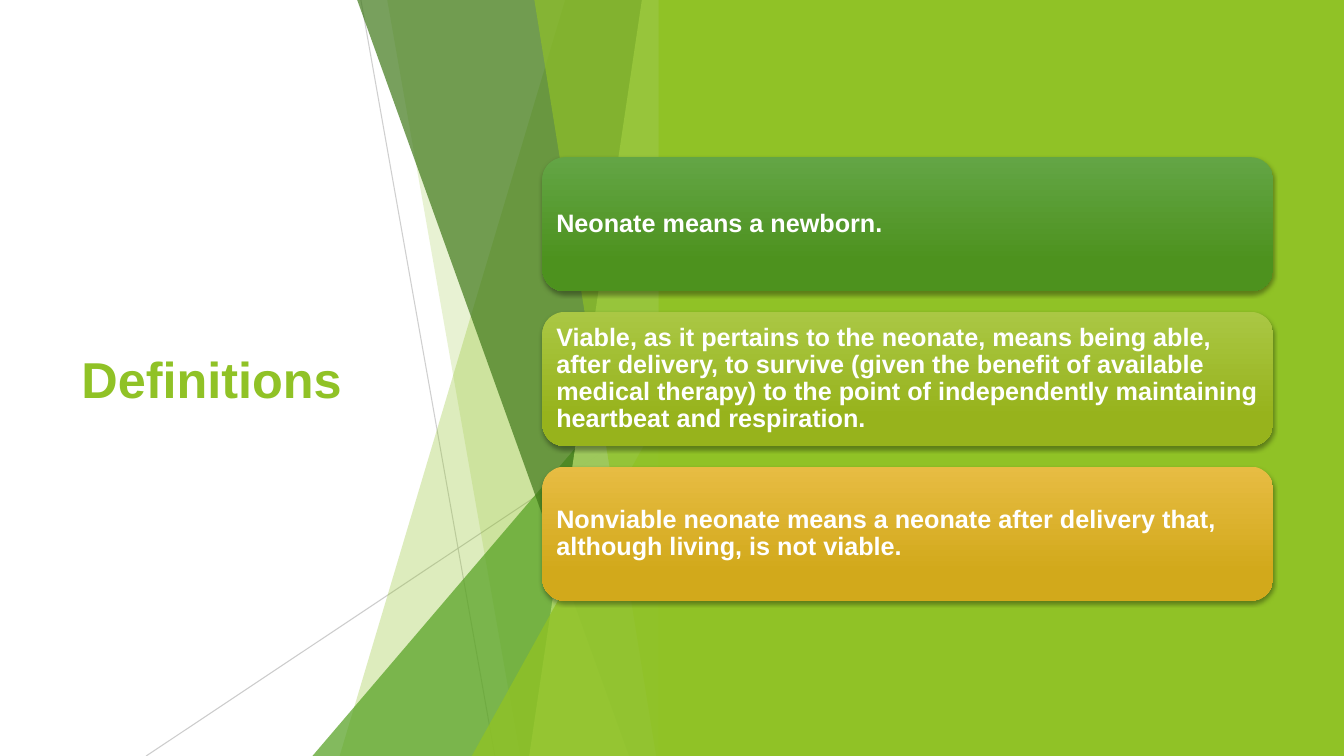
from lxml import etree
from pptx import Presentation
from pptx.dml.color import RGBColor
from pptx.enum.shapes import MSO_CONNECTOR, MSO_SHAPE
from pptx.enum.text import MSO_ANCHOR, PP_ALIGN
from pptx.oxml.ns import qn
from pptx.util import Pt

STRAIGHT = MSO_CONNECTOR.STRAIGHT
RECTANGLE = MSO_SHAPE.RECTANGLE
ROUNDED = MSO_SHAPE.ROUNDED_RECTANGLE
TRIANGLE = MSO_SHAPE.ISOSCELES_TRIANGLE
MIDDLE = MSO_ANCHOR.MIDDLE
LEFT = PP_ALIGN.LEFT

WIDTH, HEIGHT = 960, 540
FACET_TOP, FACET_RIGHT = -0.7, 479.5
LIME, GREEN, FOREST, PALE = "90C226", "54A021", "3F7819", "C0E474"
GREY, WHITE, BLACK = "BFBFBF", "FFFFFF", "000000"

CARD_LEFT, CARD_TOP, CARD_WIDTH, CARD_HEIGHT = 387.4, 112.3, 522, 95.8
CARD_PITCH = 110.5
DEFINITIONS = [
    ("63A545", "4D921E", "Neonate means a newborn."),
    ("AAC744", "97B31C",
     "Viable, as it pertains to the neonate, means being able, after delivery, "
     "to survive (given the benefit of available medical therapy) to the point "
     "of independently maintaining heartbeat and respiration."),
    ("E7BC43", "D2A91B",
     "Nonviable neonate means a neonate after delivery that, "
     "although living, is not viable."),
]


def rgb(color):
    return RGBColor.from_string(color)


def set_opacity(shape, percent):
    """Make the only RGB colour of the shape partly transparent."""
    color = next(shape._element.spPr.iter(qn("a:srgbClr")))
    etree.SubElement(color, qn("a:alpha"), val=str(percent * 1000))


class FacetSlide:
    font = "Arial"

    def __init__(self, slide):
        self.shapes = slide.shapes

    def line(self, x1, y1, x2, y2, opacity):
        line = self.shapes.add_connector(STRAIGHT, Pt(x1), Pt(y1), Pt(x2), Pt(y2))
        line.line.color.rgb = rgb(GREY)
        line.line.width = Pt(0.75)
        set_opacity(line, opacity)
        etree.SubElement(line._element.spPr, qn("a:effectLst"))

    def paint(self, shape, color, opacity=100):
        shape.shadow.inherit = False
        shape.line.fill.background()
        shape.fill.solid()
        shape.fill.fore_color.rgb = rgb(color)
        if opacity < 100:
            set_opacity(shape, opacity)

    def facet(self, top_x, bottom_x, color, opacity):
        """Full-height band with a slanted left side."""
        outline = self.shapes.build_freeform(Pt(top_x), Pt(FACET_TOP))
        outline.add_line_segments([
            (Pt(FACET_RIGHT), Pt(FACET_TOP)),
            (Pt(FACET_RIGHT), Pt(HEIGHT)),
            (Pt(bottom_x), Pt(HEIGHT)),
        ])
        self.paint(outline.convert_to_shape(), color, opacity)

    def corner(self, left, top, color, opacity):
        """Right triangle standing on the bottom edge, apex at the right."""
        triangle = self.shapes.add_shape(
            TRIANGLE, Pt(left), Pt(top), Pt(FACET_RIGHT - left), Pt(HEIGHT - top))
        triangle.adjustments[0] = 1
        self.paint(triangle, color, opacity)

    def panel(self, left, color):
        self.paint(self.shapes.add_shape(
            RECTANGLE, Pt(left), 0, Pt(WIDTH - left), Pt(HEIGHT)), color)

    def add_text(self, shape, text, size, color):
        frame = shape.text_frame
        frame.word_wrap = True
        frame.vertical_anchor = MIDDLE
        paragraph = frame.paragraphs[0]
        paragraph.alignment = LEFT
        run = paragraph.add_run()
        run.text = text
        run.font.name = self.font
        run.font.size = Pt(size)
        run.font.bold = True
        run.font.color.rgb = rgb(color)
        return frame

    def title(self, text, left, top, width, height):
        box = self.shapes.add_textbox(Pt(left), Pt(top), Pt(width), Pt(height))
        self.add_text(box, text, 36, LIME)

    def card(self, top, light, dark, text):
        card = self.shapes.add_shape(
            ROUNDED, Pt(CARD_LEFT), Pt(top), Pt(CARD_WIDTH), Pt(CARD_HEIGHT))
        card.line.fill.background()
        card.fill.gradient()
        card.fill.gradient_angle = 270
        for stop, position, color in zip(
                card.fill.gradient_stops, (0, 0.78), (light, dark)):
            stop.position = position
            stop.color.rgb = rgb(color)
        self.drop_shadow(card)
        frame = self.add_text(card, text, 18, WHITE)
        frame.margin_left = frame.margin_right = Pt(5.3)
        frame.margin_top = frame.margin_bottom = Pt(5.3)
        frame.paragraphs[0].line_spacing = 0.9

    def drop_shadow(self, shape):
        shape.shadow.inherit = False
        effects = shape._element.spPr.find(qn("a:effectLst"))
        shadow = etree.SubElement(
            effects, qn("a:outerShdw"), blurRad=str(Pt(3)), dist=str(Pt(2)),
            dir="5400000", algn="ctr", rotWithShape="0")
        color = etree.SubElement(shadow, qn("a:srgbClr"), val=BLACK)
        etree.SubElement(color, qn("a:alpha"), val="35000")


def main():
    deck = Presentation()
    deck.slide_width, deck.slide_height = Pt(WIDTH), Pt(HEIGHT)
    page = FacetSlide(deck.slides.add_slide(deck.slide_layouts[6]))

    page.title("Definitions", 51.1, 108.7, 279.4, 322.6)

    page.line(257.8, 0, 353.5, HEIGHT, 75)
    page.line(FACET_RIGHT, 290.2, 104.4, HEIGHT, 80)
    page.facet(403.9, 242.6, LIME, 30)
    page.facet(276.5, 371.5, LIME, 20)
    page.corner(223.2, 239.8, GREEN, 72)
    page.facet(254.9, 449.3, FOREST, 70)
    page.facet(458.6, 378, PALE, 70)
    page.facet(381.6, 468.7, LIME, 65)
    page.corner(337, 283, LIME, 80)
    page.panel(470.5, LIME)

    for index, (light, dark, text) in enumerate(DEFINITIONS):
        page.card(CARD_TOP + index * CARD_PITCH, light, dark, text)

    deck.save("out.pptx")


if __name__ == "__main__":
    main()
